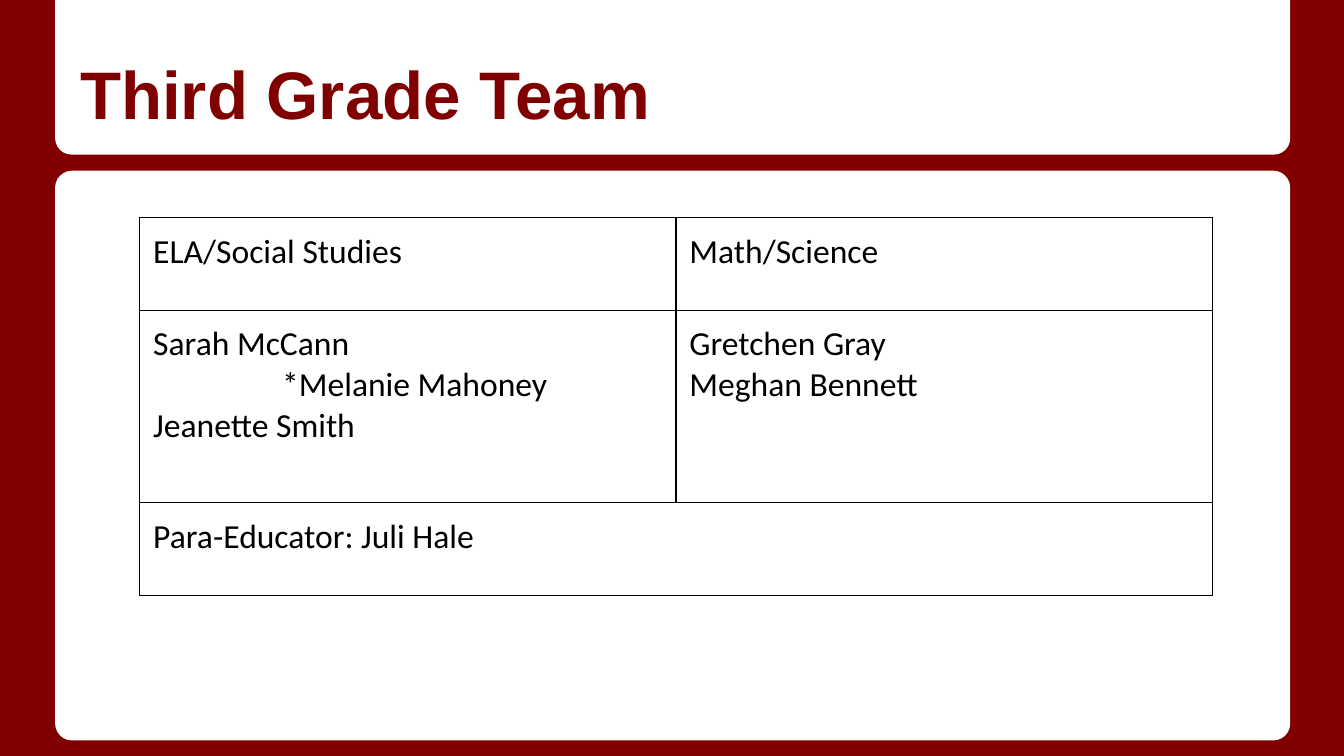
from lxml import etree
from pptx import Presentation
from pptx import util as u
from pptx.dml import color
from pptx.enum import shapes, text
from pptx.oxml import ns

WIDTH = 10
HEIGHT = WIDTH * 9 / 16
PANEL_LEFT, PANEL_WIDTH = 0.041 * WIDTH, 0.919 * WIDTH
MAROON, WHITE, BLACK = "800000", "FFFFFF", "000000"
INSET = u.Inches(0.1)
NAME_INDENT = 0.96
ROW_HEIGHTS = [0.69, 1.43, 0.69]
TEAM = [
    [["ELA/Social Studies"], ["Math/Science"]],
    [["Sarah McCann", "*Melanie Mahoney", "Jeanette Smith"],
     ["Gretchen Gray", "Meghan Bennett"]],
    [["Para-Educator: Juli Hale"]],
]


def paint(fill, value):
    fill.solid()
    fill.fore_color.rgb = color.RGBColor.from_string(value)


def add_panel(page, kind, top, height, corners, rotation=0):
    panel = page.shapes.add_shape(
        kind, u.Inches(PANEL_LEFT), u.Inches(top),
        u.Inches(PANEL_WIDTH), u.Inches(height))
    for index, corner in enumerate(corners):
        panel.adjustments[index] = corner
    panel.rotation = rotation
    panel.shadow.inherit = False
    paint(panel.fill, WHITE)
    panel.line.fill.background()


def add_span(para, words, font, size, value, bold=False):
    span = para.add_run()
    span.text = words
    span.font.name = font
    span.font.size = u.Pt(size)
    span.font.bold = bold
    paint(span.font.fill, value)


def set_insets(holder):
    holder.margin_left = holder.margin_right = INSET
    holder.margin_top = holder.margin_bottom = INSET


def add_title(page, words):
    box = page.shapes.add_textbox(
        u.Inches(0.05 * WIDTH), u.Inches(0.15), u.Inches(0.9 * WIDTH), u.Inches(0.94))
    frame = box.text_frame
    frame.word_wrap = True
    frame.vertical_anchor = text.MSO_ANCHOR.BOTTOM
    set_insets(frame)
    add_span(frame.paragraphs[0], words, "Arial", 36, MAROON, bold=True)


def outline(cell):
    properties = cell._tc.get_or_add_tcPr()
    for side in ("a:lnL", "a:lnR", "a:lnT", "a:lnB"):
        edge = etree.SubElement(properties, ns.qn(side), w=str(u.Pt(0.75)))
        solid = etree.SubElement(edge, ns.qn("a:solidFill"))
        etree.SubElement(solid, ns.qn("a:srgbClr"), val=BLACK)


def fill_cell(cell, lines):
    frame = cell.text_frame
    for index, words in enumerate(lines):
        para = frame.add_paragraph() if index else frame.paragraphs[0]
        if words.startswith("*"):
            para._p.get_or_add_pPr().set("marL", str(u.Inches(NAME_INDENT)))
        add_span(para, words, "Calibri", 18, BLACK)


def add_team_table(page, team):
    table = page.shapes.add_table(
        len(team), 2, u.Inches(1.04), u.Inches(1.62),
        u.Inches(7.98), u.Inches(sum(ROW_HEIGHTS))).table
    table.first_row = table.horz_banding = False
    for row, height in zip(table.rows, ROW_HEIGHTS):
        row.height = u.Inches(height)
    for cell in table.iter_cells():
        set_insets(cell)
        outline(cell)
        paint(cell.fill, WHITE)
    for row_index, row in enumerate(team):
        if len(row) == 1:
            table.cell(row_index, 0).merge(table.cell(row_index, 1))
        for column_index, lines in enumerate(row):
            fill_cell(table.cell(row_index, column_index), lines)


def main():
    deck = Presentation()
    deck.slide_width, deck.slide_height = u.Inches(WIDTH), u.Inches(HEIGHT)
    page = deck.slides.add_slide(deck.slide_layouts[6])
    paint(page.background.fill, MAROON)
    kinds = shapes.MSO_SHAPE
    add_panel(page, kinds.ROUNDED_RECTANGLE, 1.27, 4.24, [0.03])
    add_panel(page, kinds.ROUND_2_SAME_RECTANGLE, 0, 1.15, [0.106, 0], rotation=180)
    add_title(page, "Third Grade Team")
    add_team_table(page, TEAM)
    deck.save("out.pptx")


if __name__ == "__main__":
    main()
